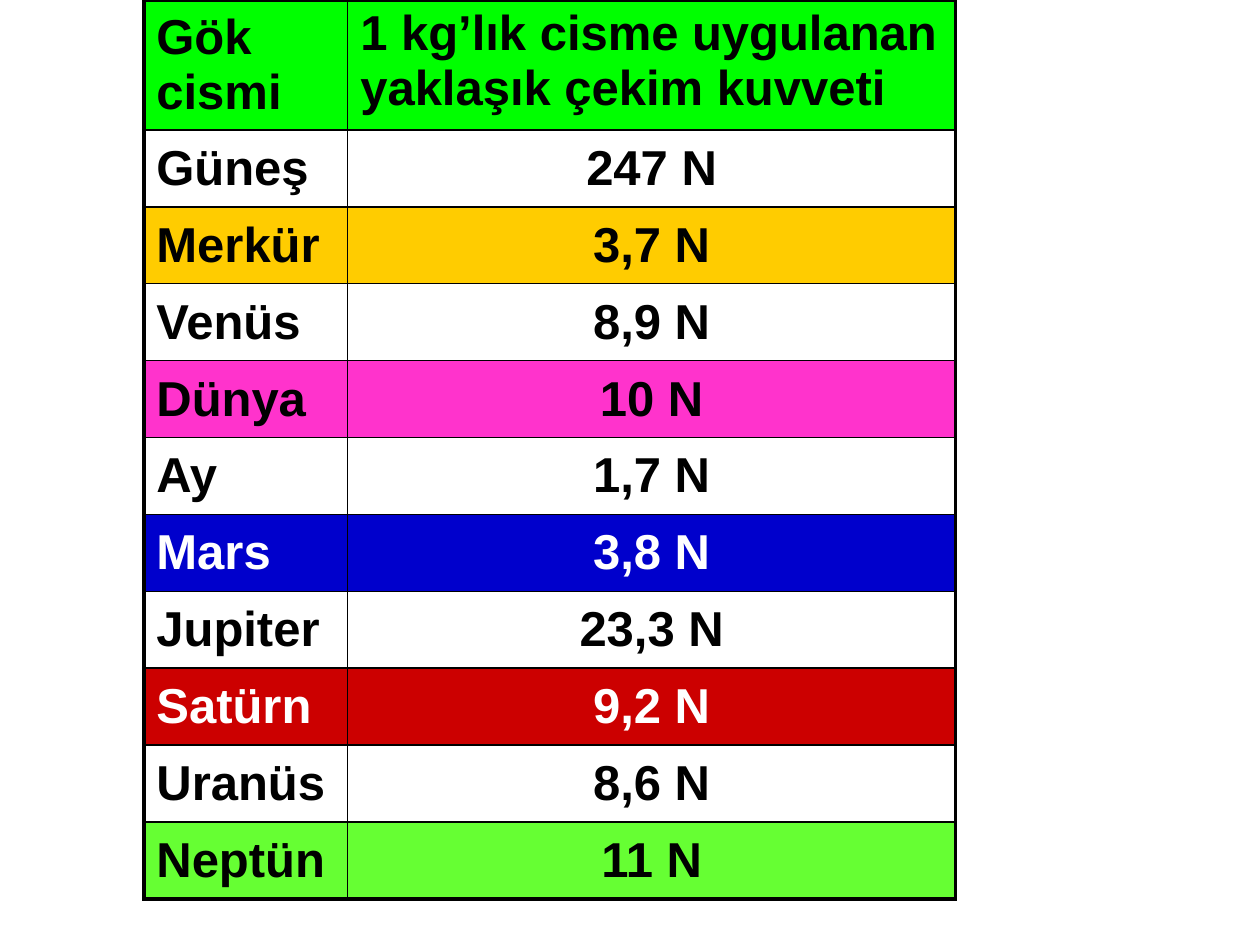
from lxml import etree
from pptx import Presentation
from pptx.dml.color import RGBColor
from pptx.enum import text
from pptx.oxml import ns
from pptx.util import Cm, Pt

BLACK = RGBColor(0x00, 0x00, 0x00)
WHITE = RGBColor(0xFF, 0xFF, 0xFF)
GREEN = RGBColor(0x00, 0xFF, 0x00)
GOLD = RGBColor(0xFF, 0xCC, 0x00)
PINK = RGBColor(0xFF, 0x33, 0xCC)
BLUE = RGBColor(0x00, 0x00, 0xCC)
RED = RGBColor(0xCC, 0x00, 0x00)
LIME = RGBColor(0x66, 0xFF, 0x33)

OUTER, INNER = Pt(2.25), Pt(1)
HEADER_HEIGHT = Cm(2.62)
BODY_NAME_WIDTH = Cm(4.11)

GRAVITY = [
    ("Gök cismi", "1 kg’lık cisme uygulanan yaklaşık çekim kuvveti", GREEN, BLACK),
    ("Güneş", "247 N", None, BLACK),
    ("Merkür", "3,7 N", GOLD, BLACK),
    ("Venüs", "8,9 N", None, BLACK),
    ("Dünya", "10 N", PINK, BLACK),
    ("Ay", "1,7 N", None, BLACK),
    ("Mars", "3,8 N", BLUE, WHITE),
    ("Jupiter", "23,3 N", None, BLACK),
    ("Satürn", "9,2 N", RED, WHITE),
    ("Uranüs", "8,6 N", None, BLACK),
    ("Neptün", "11 N", LIME, BLACK),
]


def set_borders(cell, widths):
    properties = cell._tc.get_or_add_tcPr()
    for position, (side, width) in enumerate(widths.items()):
        border = etree.Element(ns.qn(f"a:ln{side}"), w=str(width))
        paint = etree.SubElement(border, ns.qn("a:solidFill"))
        etree.SubElement(paint, ns.qn("a:srgbClr"), val=str(BLACK))
        properties.insert(position, border)


def fill_cell(cell, wording, background, ink):
    cell.text_frame.text = wording
    font = cell.text_frame.paragraphs[0].runs[0].font
    font.name, font.size, font.bold = "Arial", Pt(28), True
    font.color.rgb = ink
    cell.vertical_anchor = text.MSO_ANCHOR.MIDDLE
    if background is None:
        cell.fill.background()
    else:
        cell.fill.solid()
        cell.fill.fore_color.rgb = background


def add_gravity_table(slide, left, top, width, height):
    last = len(GRAVITY) - 1
    gravity = slide.shapes.add_table(len(GRAVITY), 2, left, top, width, height).table
    gravity.first_row = gravity.horz_banding = False
    gravity.columns[0].width = BODY_NAME_WIDTH
    gravity.columns[1].width = width - BODY_NAME_WIDTH

    for row, (body, force, background, ink) in enumerate(GRAVITY):
        gravity.rows[row].height = HEADER_HEIGHT if row == 0 else (height - HEADER_HEIGHT) // last
        for column, wording in enumerate((body, force)):
            cell = gravity.cell(row, column)
            fill_cell(cell, wording, background, ink)
            set_borders(cell, {
                "L": OUTER if column == 0 else INNER,
                "R": OUTER if column == 1 else INNER,
                "T": OUTER if row == 0 else INNER,
                "B": OUTER if row == last else INNER,
            })
        if row > 0:
            cell.text_frame.paragraphs[0].alignment = text.PP_ALIGN.CENTER
    gravity.cell(0, 1).vertical_anchor = text.MSO_ANCHOR.TOP


def main():
    deck = Presentation()
    deck.slide_width, deck.slide_height = Cm(25.4), Cm(19.05)
    slide = deck.slides.add_slide(deck.slide_layouts[6])
    add_gravity_table(slide, Cm(2.9), Cm(0), Cm(16.36), Cm(18.12))
    deck.save("out.pptx")


if __name__ == "__main__":
    main()
